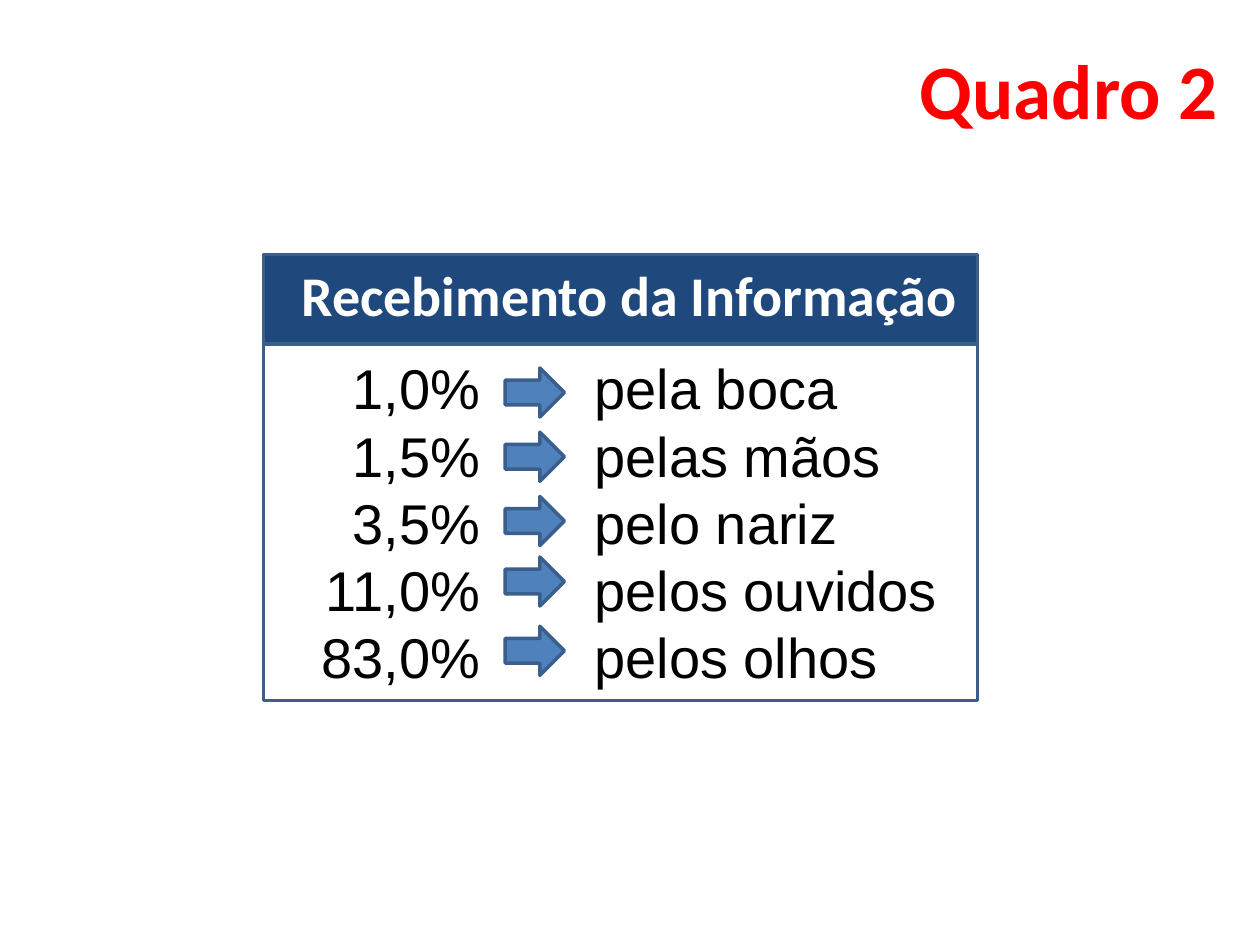
from pptx import Presentation
from pptx.dml.color import RGBColor
from pptx.enum.shapes import MSO_SHAPE
from pptx.enum.text import MSO_ANCHOR, MSO_AUTO_SIZE, PP_ALIGN
from pptx.util import Inches, Pt

NAVY = RGBColor(0x1F, 0x49, 0x7D)
BLUE = RGBColor(0x4F, 0x81, 0xBD)
OUTLINE = RGBColor(0x3A, 0x5F, 0x8C)
RED = RGBColor(0xFF, 0x00, 0x00)
WHITE = RGBColor(0xFF, 0xFF, 0xFF)
BLACK = RGBColor(0x00, 0x00, 0x00)

TITLE_FONT = {"name": "Calibri", "size": Pt(44), "bold": True, "color": RED}
HEADING_FONT = {"name": "Calibri", "size": Pt(32), "bold": True, "color": WHITE}
BODY_FONT = {"name": "Arial", "size": Pt(32), "bold": False, "color": BLACK}

CHANNELS = [
    ("1,0%", "pela boca", 2.92),
    ("1,5%", "pelas mãos", 3.43),
    ("3,5%", "pelo nariz", 3.94),
    ("11,0%", "pelos ouvidos", 4.42),
    ("83,0%", "pelos olhos", 4.97),
]
FRAME_LEFT, FRAME_TOP, FRAME_WIDTH = 2.09, 2.02, 5.67


def write_lines(text_frame, lines, font_format, alignment, wrap=False):
    """Fill a text frame with one formatted paragraph per line."""
    frame_format = {
        "word_wrap": wrap,
        "auto_size": MSO_AUTO_SIZE.NONE,
        "vertical_anchor": MSO_ANCHOR.TOP,
    }
    for attribute, value in frame_format.items():
        setattr(text_frame, attribute, value)
    text_frame.text = "\n".join(lines)
    for paragraph in text_frame.paragraphs:
        paragraph.alignment = alignment
        font = paragraph.runs[0].font
        for attribute, value in font_format.items():
            if attribute == "color":
                font.color.rgb = value
            else:
                setattr(font, attribute, value)


def place_title(slide, text, left, top, width, height):
    """Move the title placeholder and write the title in it."""
    title = slide.shapes.title
    bounds = {"left": left, "top": top, "width": width, "height": height}
    for attribute, value in bounds.items():
        setattr(title, attribute, Inches(value))
    write_lines(title.text_frame, [text], TITLE_FONT, PP_ALIGN.LEFT)


def add_text(slide, bounds, lines, font_format, alignment, wrap=False):
    """Add a text box with the given lines."""
    box = slide.shapes.add_textbox(*map(Inches, bounds))
    write_lines(box.text_frame, lines, font_format, alignment, wrap)


def add_outlined_shape(slide, preset, bounds, fill=None):
    """Add an outlined preset shape, unfilled unless a colour is given."""
    shape = slide.shapes.add_shape(preset, *map(Inches, bounds))
    shape.shadow.inherit = False
    shape.line.color.rgb = OUTLINE
    shape.line.width = Pt(2)
    if fill is None:
        shape.fill.background()
    else:
        shape.fill.solid()
        shape.fill.fore_color.rgb = fill


def main():
    """Build the slide and save it."""
    presentation = Presentation()
    presentation.slide_width = Inches(10)
    presentation.slide_height = Inches(7.5)
    slide = presentation.slides.add_slide(presentation.slide_layouts[5])
    place_title(slide, "Quadro 2", 7.2, 0.29, 2.59, 0.84)

    add_outlined_shape(slide, MSO_SHAPE.RECTANGLE,
                       (FRAME_LEFT, FRAME_TOP, FRAME_WIDTH, 0.71), NAVY)
    add_text(slide, (2.24, FRAME_TOP, 5.51, 1.18), ["Recebimento da Informação"],
             HEADING_FONT, PP_ALIGN.CENTER, wrap=True)

    shares, senses, arrow_tops = zip(*CHANNELS)
    add_text(slide, (2.44, 2.76, 1.47, 2.79), shares, BODY_FONT, PP_ALIGN.RIGHT)
    add_text(slide, (4.62, 2.76, 2.94, 2.79), senses, BODY_FONT, PP_ALIGN.LEFT)
    for arrow_top in arrow_tops:
        add_outlined_shape(slide, MSO_SHAPE.RIGHT_ARROW,
                           (4.01, arrow_top, 0.47, 0.39), BLUE)

    add_outlined_shape(slide, MSO_SHAPE.RECTANGLE,
                       (FRAME_LEFT, FRAME_TOP, FRAME_WIDTH, 3.54))
    presentation.save("out.pptx")


if __name__ == "__main__":
    main()
